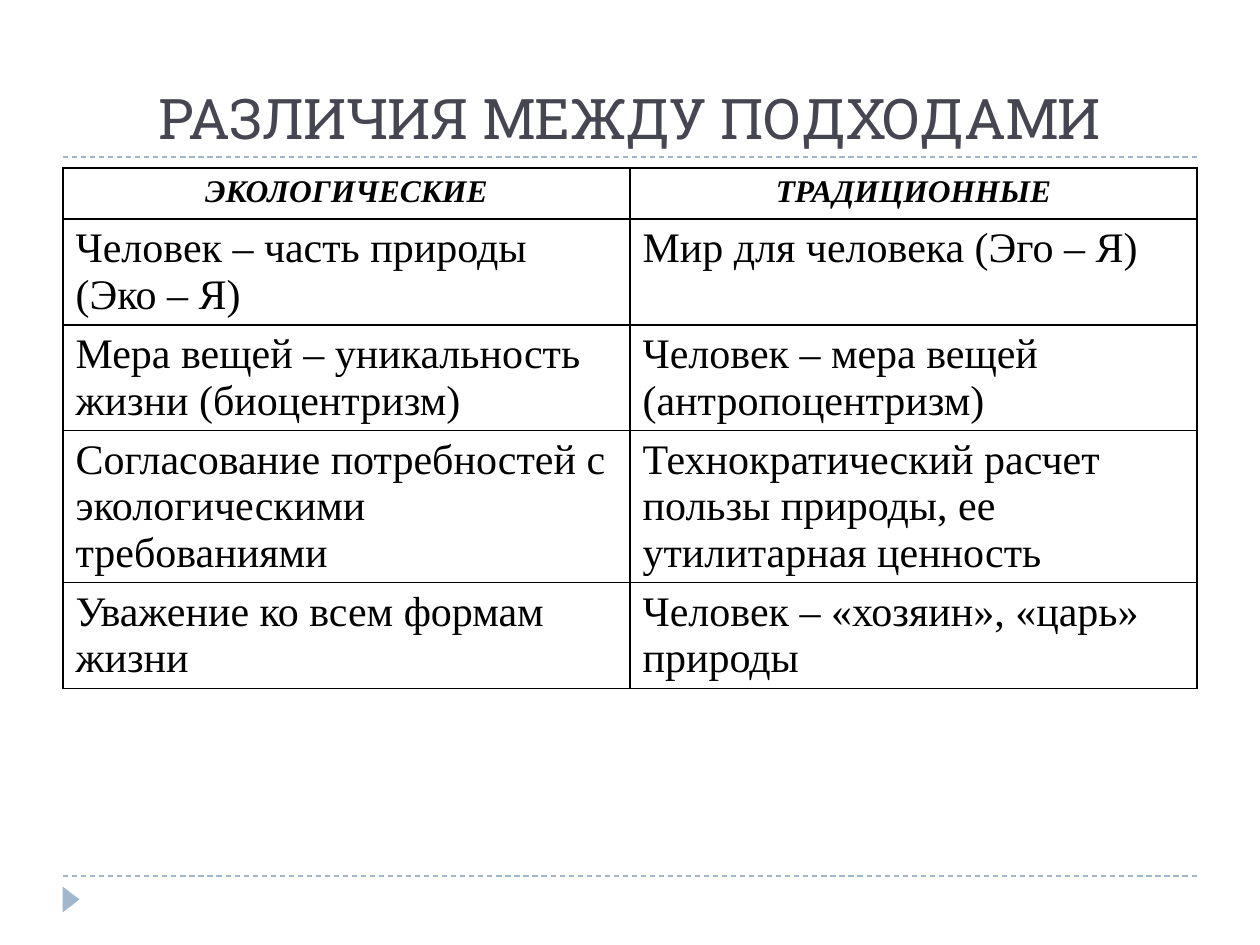
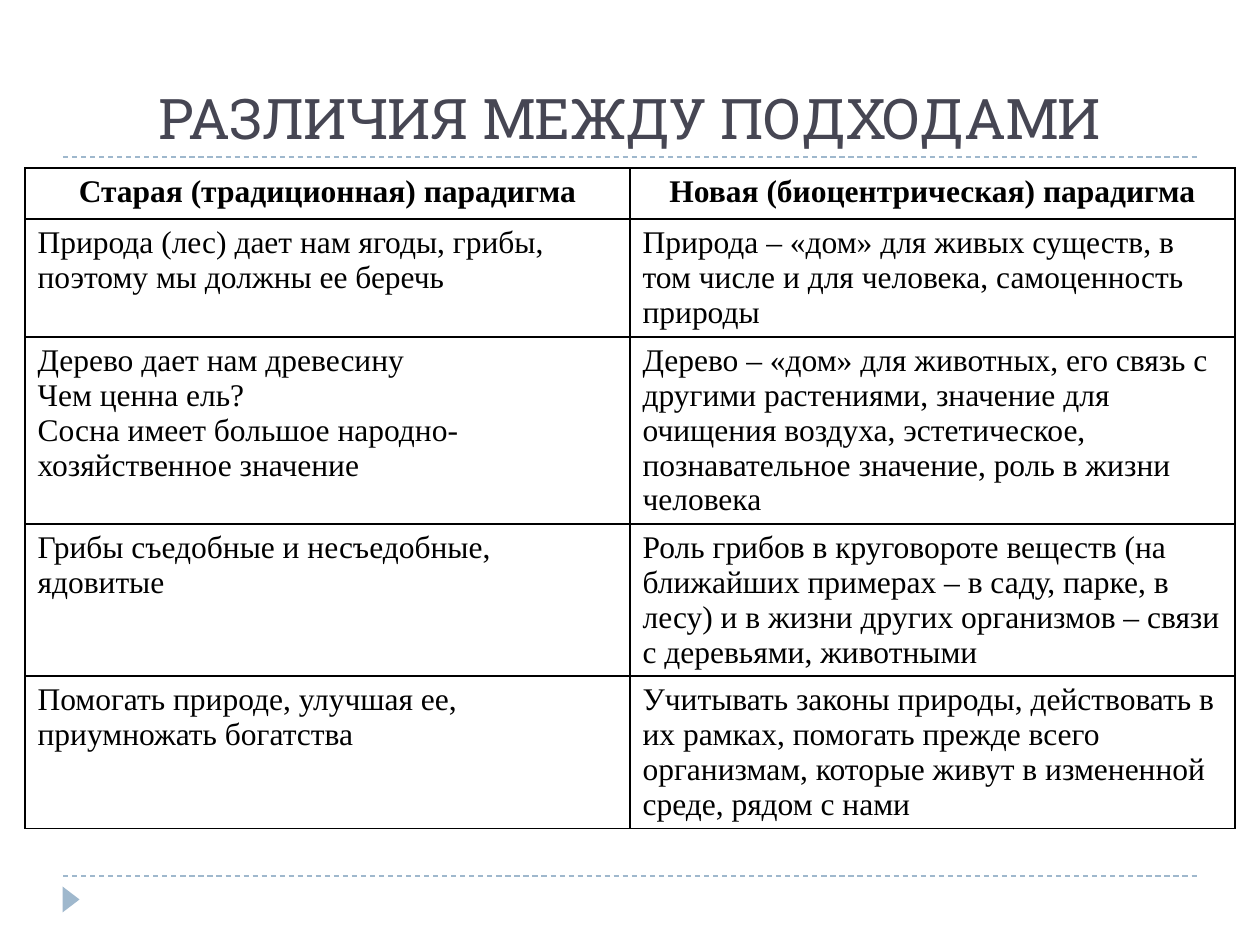
import pptx
import pptx.util
import pptx.dml.color
import pptx.enum.dml
import pptx.enum.shapes
import pptx.enum.text
import pptx.oxml
import pptx.oxml.ns
import lxml.etree

PX = 914400 / 126
COLOURS = {"accent": "9FB8CD", "title": "464653", "text": "000000", "paper": "FFFFFF"}
TITLE = "РАЗЛИЧИЯ МЕЖДУ ПОДХОДАМИ"
TABLE_TOP = 168

# Each cell is a list of paragraphs separated by line ends
slides = [
    {
        "left": 63, "column": 567, "size": 24, "italic_header": True,
        "heights": [51, 106, 105, 152, 106],
        "rows": [
            ("ЭКОЛОГИЧЕСКИЕ", "ТРАДИЦИОННЫЕ"),
            ("Человек – часть природы (Эко – Я)", "Мир для человека (Эго – Я)"),
            ("Мера вещей – уникальность жизни (биоцентризм)",
             "Человек – мера вещей (антропоцентризм)"),
            ("Согласование потребностей с экологическими требованиями",
             "Технократический расчет пользы природы, ее утилитарная ценность"),
            ("Уважение ко всем формам жизни", "Человек – «хозяин», «царь» природы"),
        ],
    },
    {
        "left": 25, "column": 605, "size": 18, "italic_header": False,
        "heights": [51, 118, 187, 152, 152],
        "rows": [
            ("Старая (традиционная) парадигма", "Новая (биоцентрическая) парадигма"),
            ("Природа (лес) дает нам ягоды, грибы, поэтому мы должны ее беречь",
             "Природа – «дом» для живых существ, в том числе и для человека, "
             "самоценность природы"),
            ("Дерево дает нам древесину\nЧем ценна ель?\n"
             "Сосна имеет большое народно-хозяйственное значение",
             "Дерево – «дом» для животных, его связь с другими растениями, значение "
             "для очищения воздуха, эстетическое, познавательное значение, роль в "
             "жизни человека"),
            ("Грибы съедобные и несъедобные, ядовитые",
             "Роль грибов в круговороте веществ (на ближайших примерах – в саду, "
             "парке, в лесу) и в жизни других организмов – связи с деревьями, животными"),
            ("Помогать природе, улучшая ее, приумножать богатства",
             "Учитывать законы природы, действовать в их рамках, помогать прежде всего "
             "организмам, которые живут в измененной среде, рядом с нами"),
        ],
    },
]


def emu(*lengths):
    return [pptx.util.Emu(round(length * PX)) for length in lengths]


def add_span(para, text, font, size, colour, bold=False, italic=False):
    span = para.add_run()
    span.text = text
    span.font.name = font
    span.font.size = pptx.util.Pt(size)
    span.font.bold = bold
    span.font.italic = italic
    span.font.color.rgb = pptx.dml.color.RGBColor.from_string(COLOURS[colour])


deck = pptx.Presentation()
deck.slide_width, deck.slide_height = emu(1260, 945)
accent = pptx.dml.color.RGBColor.from_string(COLOURS["accent"])
paper = pptx.dml.color.RGBColor.from_string(COLOURS["paper"])
centre = pptx.enum.text.PP_ALIGN.CENTER

for content in slides:
    page = deck.slides.add_slide(deck.slide_layouts[5])

    # Dashed rules under the title and above the footer
    for y in (876, 157):
        rule = page.shapes.add_connector(
            pptx.enum.shapes.MSO_CONNECTOR.STRAIGHT, *emu(63, y, 1197, y))
        rule.line.color.rgb = accent
        rule.line.width = pptx.util.Pt(0.75)
        rule.line.dash_style = pptx.enum.dml.MSO_LINE.DASH
        lxml.etree.SubElement(rule.element.spPr, pptx.oxml.ns.qn("a:effectLst"))

    # Footer marker
    marker = page.shapes.add_shape(
        pptx.enum.shapes.MSO_SHAPE.ISOSCELES_TRIANGLE, *emu(58, 891, 26, 17))
    marker.rotation = 90
    marker.shadow.inherit = False
    marker.fill.solid()
    marker.fill.fore_color.rgb = accent
    marker.line.fill.background()

    # Title
    title = page.shapes.title
    title.left, title.top, title.width, title.height = emu(63, 21, 1134, 136)
    box = title.text_frame
    box.word_wrap = True
    box.auto_size = pptx.enum.text.MSO_AUTO_SIZE.NONE
    box.vertical_anchor = pptx.enum.text.MSO_ANCHOR.BOTTOM
    box.paragraphs[0].alignment = centre
    add_span(box.paragraphs[0], TITLE, "Roboto Slab", 32, "title")

    # Comparison table
    rows, heights = content["rows"], content["heights"]
    table = page.shapes.add_table(len(rows), 2, *emu(
        content["left"], TABLE_TOP, 2 * content["column"], sum(heights))).table
    table.first_row = False
    table.horz_banding = False
    for column in table.columns:
        column.width = emu(content["column"])[0]
    for row_index, texts in enumerate(rows):
        header = row_index == 0
        table.rows[row_index].height = emu(heights[row_index])[0]
        for column_index, text in enumerate(texts):
            cell = table.cell(row_index, column_index)
            cell.fill.solid()
            cell.fill.fore_color.rgb = paper
            for index, line in enumerate(text.split("\n")):
                frame = cell.text_frame
                para = frame.add_paragraph() if index else frame.paragraphs[0]
                if header:
                    para.alignment = centre
                add_span(para, line, "Times New Roman",
                         18 if header else content["size"], "text",
                         bold=header, italic=header and content["italic_header"])

            # Borders go before the fill in the cell properties
            properties = cell._tc.get_or_add_tcPr()
            for index, side in enumerate(("lnL", "lnR", "lnT", "lnB")):
                properties.insert(index, pptx.oxml.parse_xml(
                    f'<a:{side} {pptx.oxml.ns.nsdecls("a")} w="12700"><a:solidFill>'
                    f'<a:srgbClr val="{COLOURS["text"]}"/></a:solidFill></a:{side}>'))

deck.save("out.pptx")
